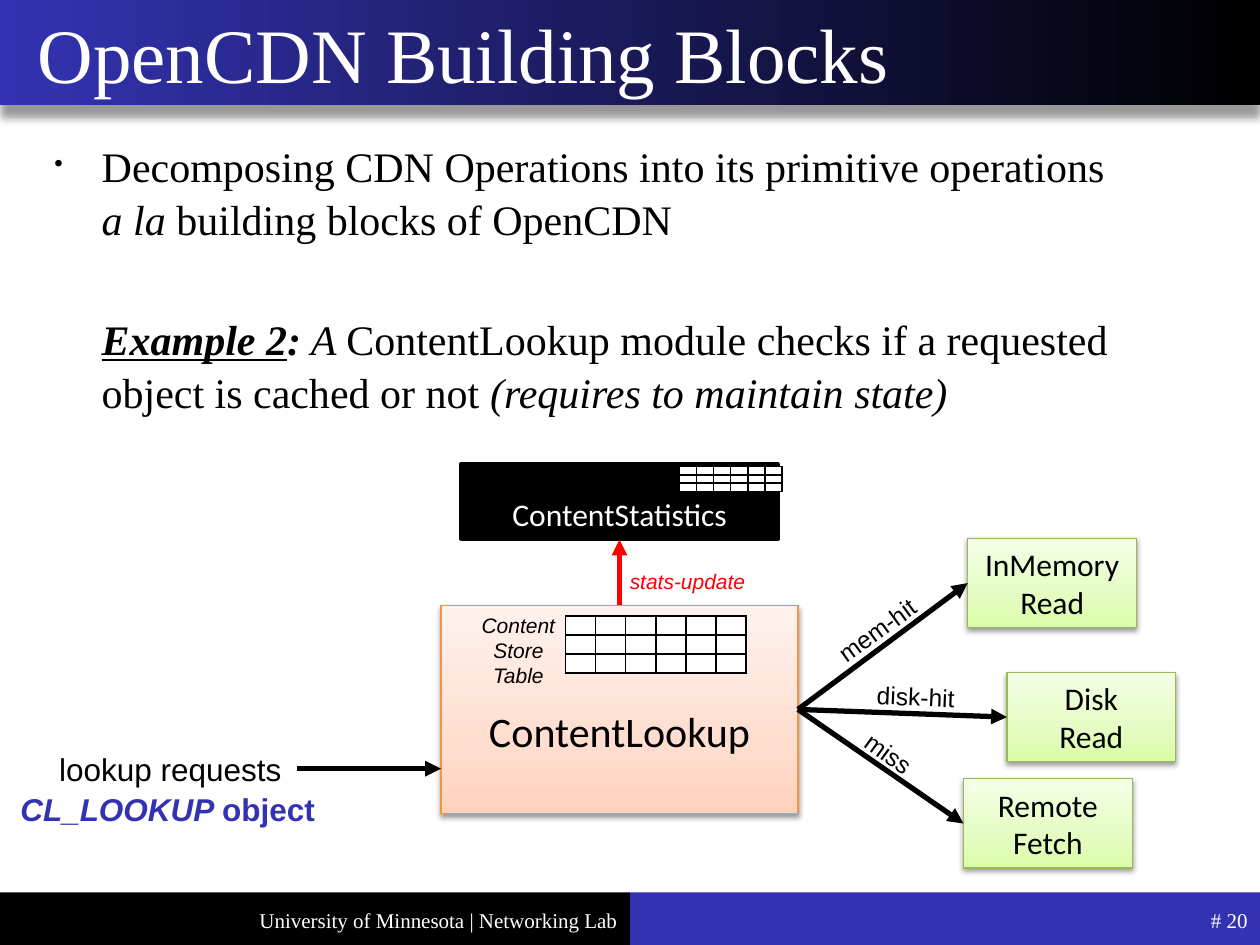
from dataclasses import dataclass

import pptx
import pptx.dml.color
import pptx.enum.shapes
import pptx.enum.text
import pptx.oxml.ns
import pptx.oxml.xmlchemy
import pptx.util
from lxml import etree

Pt = pptx.util.Pt
qn = pptx.oxml.ns.qn
ALIGN = pptx.enum.text.PP_ALIGN
ANCHOR = pptx.enum.text.MSO_ANCHOR
SERIF, SANS, LABEL = "Times New Roman", "Calibri", "Arial"
BLACK, WHITE, BLUE, RED = "000000", "FFFFFF", "3333B2", "FF0000"


@dataclass
class Run:
    text: str
    bold: bool = False
    italic: bool = False
    underline: bool = False
    line_break: bool = False


@dataclass
class Style:
    size: float
    font: str = LABEL
    color: str = BLACK
    align: int = ALIGN.LEFT
    anchor: int = ANCHOR.TOP
    wrap: bool = False


@dataclass
class Look:
    stops: tuple
    angle: int
    line: str | None
    shadow: tuple  # opacity %, blur, distance


@dataclass
class Outcome:
    box: tuple
    lines: list
    entry: tuple
    label: str
    label_box: tuple
    rotation: float


BAR = Look(((0, BLACK), (100, BLUE)), 180, None, (40, 5, 7))
ORANGE = Look(((0, "FFD2BD"), (35, "FFDED0"), (100, "FFF2ED")), 90, "F69240", (38, 3.1, 1.6))
GREEN = Look(((0, "DAFDA7"), (35, "E4FCC2"), (100, "F5FFE7")), 90, "98B955", (38, 3.1, 1.6))


def rgb(color: str):
    return pptx.dml.color.RGBColor.from_string(color)


def child(parent, tag: str, **attributes):
    return etree.SubElement(parent, qn(tag), {key: str(value) for key, value in attributes.items()})


def write(shape, paragraphs: list, style: Style) -> list:
    """Fill a shape with paragraphs, each given as a string or a list of runs."""
    frame = shape.text_frame
    frame.word_wrap = style.wrap
    frame.vertical_anchor = style.anchor
    written = []
    for index, runs in enumerate(paragraphs):
        paragraph = frame.add_paragraph() if index else frame.paragraphs[0]
        paragraph.alignment = style.align
        for part in [Run(runs)] if isinstance(runs, str) else runs:
            run = paragraph.add_run()
            run.text = part.text
            for name in ("bold", "italic", "underline"):
                if getattr(part, name):
                    setattr(run.font, name, True)
            if part.line_break:
                paragraph.add_line_break()
        written.append(paragraph)
    for paragraph in written:
        if paragraph is written[0] and style.font == SERIF and style.size == 24:
            properties = paragraph._p.get_or_add_pPr()
            child(properties, "a:buSzPct", val=60000)
            child(properties, "a:buChar", char="•")
        paragraph.font.size = Pt(style.size)
        paragraph.font.name = style.font
        paragraph.font.color.rgb = rgb(style.color)
    return written


def add_text(slide, box: tuple, paragraphs: list, style: Style, rotation: float = 0) -> list:
    shape = slide.shapes.add_textbox(*map(Pt, box))
    shape.rotation = rotation
    return write(shape, paragraphs, style)


def add_box(slide, box: tuple, color: str = BLACK, look: Look | None = None):
    shape = slide.shapes.add_shape(pptx.enum.shapes.MSO_SHAPE.RECTANGLE, *map(Pt, box))
    shape.shadow.inherit = False
    shape.line.fill.background()
    if look is None:
        shape.fill.solid()
        shape.fill.fore_color.rgb = rgb(color)
        return shape
    shape.fill.gradient()
    shape.fill.gradient_angle = look.angle
    properties = shape._element.spPr
    stops = properties.find(".//" + qn("a:gsLst"))
    for stop in list(stops):
        stops.remove(stop)
    for position, stop_color in look.stops:
        child(child(stops, "a:gs", pos=position * 1000), "a:srgbClr", val=stop_color)
    if look.line:
        shape.line.color.rgb = rgb(look.line)
        shape.line.width = Pt(0.75)
    opacity, blur, distance = look.shadow
    shadow = child(properties.find(qn("a:effectLst")), "a:outerShdw", blurRad=int(Pt(blur)),
                   dist=int(Pt(distance)), dir=5400000, rotWithShape=0)
    child(child(shadow, "a:srgbClr", val=BLACK), "a:alpha", val=opacity * 1000)
    return shape


def add_arrow(slide, start: tuple, end: tuple, color: str = BLACK) -> None:
    arrow = slide.shapes.add_connector(pptx.enum.shapes.MSO_CONNECTOR.STRAIGHT,
                                       *map(Pt, start + end))
    arrow.line.color.rgb = rgb(color)
    arrow.line.width = Pt(3)
    child(arrow.line._get_or_add_ln(), "a:tailEnd", type="triangle")
    child(arrow._element.spPr, "a:effectLst")


def add_grid(slide, left: float, top: float, column: float, row: float) -> None:
    """Draw an empty 3 by 6 state table."""
    table = slide.shapes.add_table(3, 6, *map(Pt, (left, top, column * 6, row * 3))).table
    for table_column in table.columns:
        table_column.width = Pt(column)
    for table_row in table.rows:
        table_row.height = Pt(row)
    for cell in table.iter_cells():
        cell.margin_left = cell.margin_right = cell.margin_top = cell.margin_bottom = 0
        child(cell.text_frame.paragraphs[0]._p, "a:endParaRPr", sz=100)
        for side in "LRTB":
            border = child(cell._tc.get_or_add_tcPr(), "a:ln" + side, w=int(Pt(1)))
            child(child(border, "a:solidFill"), "a:srgbClr", val=BLACK)
        cell.fill.solid()
        cell.fill.fore_color.rgb = rgb(WHITE)


def main() -> None:
    presentation = pptx.Presentation()
    presentation.slide_width, presentation.slide_height = Pt(720), Pt(540)
    slide = presentation.slides.add_slide(presentation.slide_layouts[6])

    # Bars, title and footer
    add_box(slide, (360, 510, 360, 30), BLUE)
    add_box(slide, (0, 510, 360, 30), BLACK)
    add_box(slide, (0, 0, 720, 60), look=BAR)
    footer = Style(12, SERIF, WHITE, ALIGN.RIGHT, ANCHOR.MIDDLE, True)
    add_text(slide, (84, 511, 276, 29), ["University of Minnesota | Networking Lab"], footer)
    add_text(slide, (636, 511, 84, 29), ["# 20"], footer)
    add_text(slide, (14.4, 0, 687.6, 60), ["OpenCDN Building Blocks"],
             Style(44, SERIF, WHITE, anchor=ANCHOR.MIDDLE, wrap=True))

    # Body text
    body = add_text(slide, (24, 75.6, 660, 398), [
        [Run("Decomposing CDN Operations into its primitive operations ", line_break=True),
         Run("a la", italic=True), Run(" building blocks of OpenCDN")],
        [Run("Example 2", True, True, True), Run(":", True, True), Run(" A ", italic=True),
         Run("ContentLookup module checks if a requested object is cached or not "),
         Run("(requires to maintain state)", italic=True)],
    ], Style(24, SERIF, wrap=True))
    for paragraph, indent in zip(body, (-27, 0)):
        paragraph.line_spacing = 1.05
        paragraph._p.get_or_add_pPr().set("marL", str(int(Pt(27))))
        paragraph._p.get_or_add_pPr().set("indent", str(int(Pt(indent))))
    body[1].space_before = Pt(38)

    # Lookup module with its request and state table
    lookup = add_box(slide, (252, 346, 204, 119), look=ORANGE)
    write(lookup, ["ContentLookup"], Style(24, SANS, BLACK, ALIGN.CENTER, ANCHOR.BOTTOM, True))
    lookup.text_frame.margin_bottom = Pt(33)
    add_arrow(slide, (170, 439.3), (252, 439.3))
    add_text(slide, (26.7, 425, 142.6, 29), ["lookup requests"], Style(18))
    add_text(slide, (3.6, 448, 184.4, 29),
             [[Run("CL_LOOKUP ", True, True), Run("object", True)]],
             Style(18, color=BLUE, align=ALIGN.CENTER))
    add_grid(slide, 323.2, 352, 17.2, 10.9)
    add_text(slide, (267.8, 346.3, 56.9, 51),
             [[Run(word, italic=True)] for word in ("Content", "Store", "Table")],
             Style(12, align=ALIGN.CENTER))

    # Lookup outcomes
    box_style = Style(18, SANS, BLACK, ALIGN.CENTER, ANCHOR.MIDDLE, True)
    for outcome in (
        Outcome((553, 307.6), ["InMemoryRead"], (553, 333.2), "mem-hit",
                (468.7, 347.8, 65.5, 24.5), 324),
        Outcome((575.4, 384.2), ["Disk", "Read"], (575.4, 409.8), "disk-hit",
                (494, 386, 59, 24.5), 2.6),
        Outcome((550.6, 445), ["Remote", "Fetch"], (550.6, 470.6), "miss",
                (487.4, 419, 44, 20.2), 36.1),
    ):
        write(add_box(slide, outcome.box + (96.5, 51), look=GREEN), outcome.lines, box_style)
        add_arrow(slide, (456, 405.4), outcome.entry)
        add_text(slide, outcome.label_box, [outcome.label], Style(14), outcome.rotation)

    # Statistics module
    statistics = add_box(slide, (263.4, 265.2, 181.4, 43))
    statistics.line.color.rgb = rgb(BLACK)
    statistics.line.width = Pt(2)
    write(statistics, ["ContentStatistics"],
          Style(18, SANS, WHITE, ALIGN.CENTER, ANCHOR.BOTTOM, True))
    add_arrow(slide, (354, 346), (354, 308.4), RED)
    add_text(slide, (352.8, 321.2, 81.4, 21.6), [[Run("stats-update", italic=True)]],
             Style(12, color=RED))
    add_grid(slide, 388.2, 266.5, 9.8, 4.8)

    presentation.save("out.pptx")


if __name__ == "__main__":
    main()
